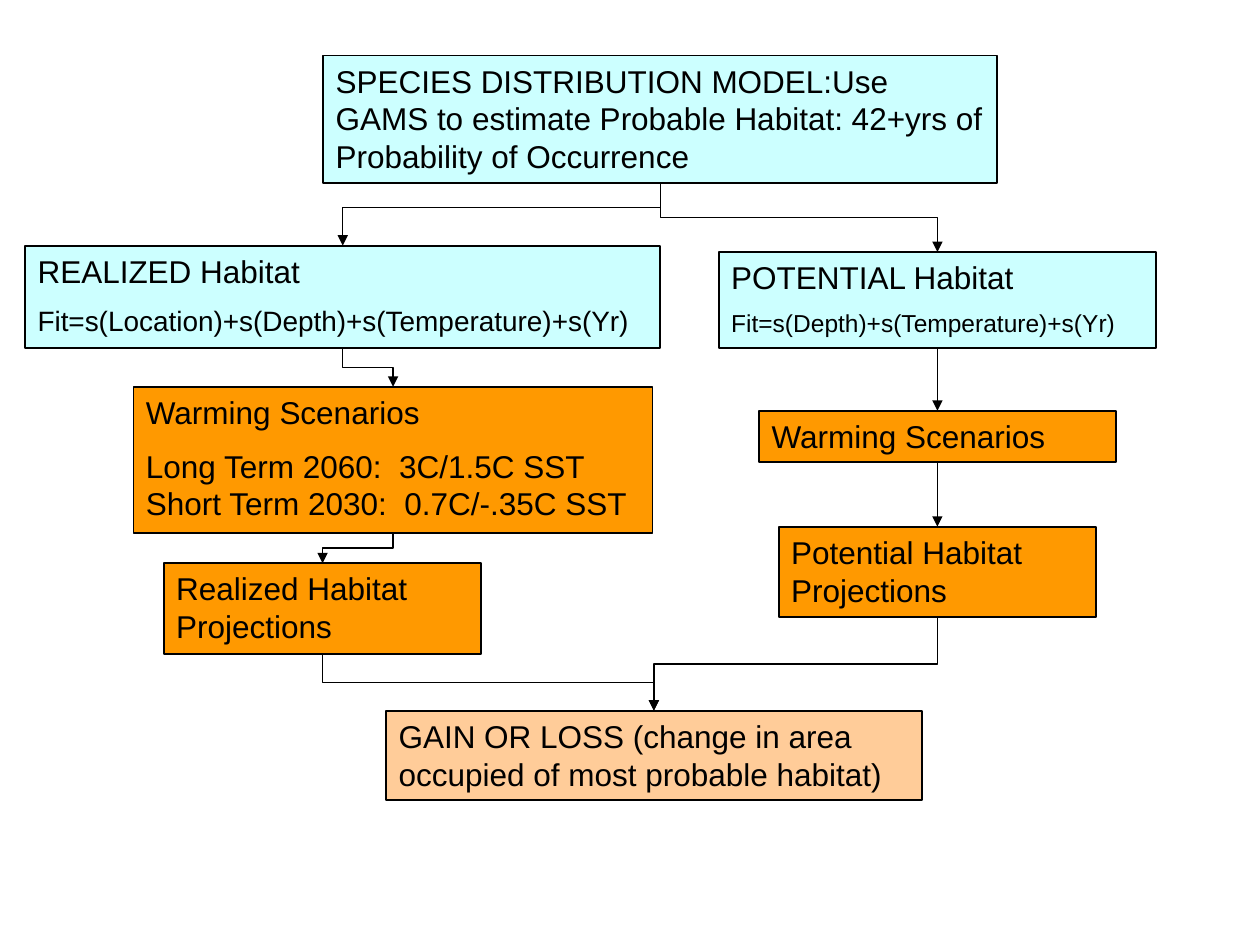
import pptx
import pptx.util
import pptx.dml.color
import pptx.enum.shapes
import pptx.enum.text
import pptx.oxml
import pptx.oxml.ns
from dataclasses import dataclass

COLUMNS, ROWS = 100, 75
WIDTH, HEIGHT = pptx.util.Inches(10), pptx.util.Inches(7.5)
BOTTOM, TOP = 2, 0
CONNECTOR = pptx.enum.shapes.MSO_CONNECTOR


@dataclass(frozen=True)
class Theme:
    font: str = "Arial"
    ink: str = "000000"
    model: str = "CCFFFF"
    scenario: str = "FF9900"
    outcome: str = "FFCC99"
    heading: int = 18
    formula: int = 16
    small_formula: int = 14
    outline: float = 1
    arrow: float = 0.75


THEME = Theme()


def across(columns):
    return round(WIDTH * columns / COLUMNS)


def down(rows):
    return round(HEIGHT * rows / ROWS)


def rgb(value):
    return pptx.dml.color.RGBColor.from_string(value)


def add_box(page, center, top, width, height, fill, *lines):
    box = page.shapes.add_shape(
        pptx.enum.shapes.MSO_SHAPE.RECTANGLE,
        across(center - width / 2), down(top), across(width), down(height))
    box.shadow.inherit = False
    box.fill.solid()
    box.fill.fore_color.rgb = rgb(fill)
    box.line.color.rgb = rgb(THEME.ink)
    box.line.width = pptx.util.Pt(THEME.outline)
    frame = box.text_frame
    frame.word_wrap = True
    frame.auto_size = pptx.enum.text.MSO_AUTO_SIZE.SHAPE_TO_FIT_TEXT
    frame.vertical_anchor = pptx.enum.text.MSO_ANCHOR.TOP
    for index, (text, size) in enumerate(lines):
        para = frame.add_paragraph() if index else frame.paragraphs[0]
        para.alignment = pptx.enum.text.PP_ALIGN.LEFT
        para.space_before = pptx.util.Pt(size / 2 if index else 0)
        span = para.add_run()
        span.text = text
        span.font.name = THEME.font
        span.font.size = pptx.util.Pt(size)
        span.font.color.rgb = rgb(THEME.ink)
    return box


def add_arrow(page, kind, left, top, right, bottom):
    arrow = page.shapes.add_connector(kind, left, top, right, bottom)
    arrow.line.color.rgb = rgb(THEME.ink)
    arrow.line.width = pptx.util.Pt(THEME.arrow)
    outline = arrow.line._get_or_add_ln()
    head = pptx.oxml.parse_xml(
        f'<a:tailEnd {pptx.oxml.ns.nsdecls("a")} type="triangle"/>')
    outline.append(head)
    effects = pptx.oxml.parse_xml(f'<a:effectLst {pptx.oxml.ns.nsdecls("a")}/>')
    arrow.element.spPr.append(effects)
    return arrow


def center_of(box):
    return box.left + box.width // 2


def add_straight(page, upper, lower):
    arrow = add_arrow(page, CONNECTOR.STRAIGHT, center_of(upper),
                      upper.top + upper.height, center_of(lower), lower.top)
    arrow.begin_connect(upper, BOTTOM)
    arrow.end_connect(lower, TOP)


def add_step(page, upper, lower):
    start, end = center_of(upper), center_of(lower)
    begin = upper.top + upper.height
    drop, shift = lower.top - begin, abs(end - start)
    left = (start + end - drop) // 2
    top = (begin + lower.top - shift) // 2
    arrow = add_arrow(page, CONNECTOR.ELBOW, left, top, left + drop, top + shift)
    if end > start:
        arrow.rotation_frame = None
        turn_arrow(arrow, 270, "flipH")
    else:
        turn_arrow(arrow, 90)


def turn_arrow(arrow, degrees, flip=None):
    frame = arrow.element.spPr.find(pptx.oxml.ns.qn("a:xfrm"))
    frame.set("rot", str(degrees * 60000))
    if flip:
        frame.set(flip, "1")


def add_branch(page, upper, lower, row):
    arrow = add_arrow(page, CONNECTOR.ELBOW, center_of(lower), down(row),
                      center_of(upper), lower.top)
    turn_arrow(arrow, 180, "flipV")
    geometry = arrow.element.spPr.find(pptx.oxml.ns.qn("a:prstGeom"))
    geometry.set("prst", "bentConnector2")


def main():
    deck = pptx.Presentation()
    deck.slide_width, deck.slide_height = WIDTH, HEIGHT
    page = deck.slides.add_slide(deck.slide_layouts[6])
    size = THEME.heading
    right_center = 74.4

    model = add_box(
        page, 52.4, 4.4, 53.5, 10.1, THEME.model,
        ("SPECIES DISTRIBUTION MODEL:Use GAMS to estimate Probable Habitat: "
         "42+yrs of Probability of Occurrence", size))
    realized_warming = add_box(
        page, 31.2, 30.7, 41.2, 11.6, THEME.scenario,
        ("Warming Scenarios", size),
        ("Long Term 2060:  3C/1.5C SST Short Term 2030:  0.7C/-.35C SST", size))
    realized = add_box(
        page, 27.2, 19.5, 50.4, 8.1, THEME.model,
        ("REALIZED Habitat", size),
        ("Fit=s(Location)+s(Depth)+s(Temperature)+s(Yr)", THEME.formula))
    potential = add_box(
        page, right_center, 20, 34.7, 7.6, THEME.model,
        ("POTENTIAL Habitat", size),
        ("Fit=s(Depth)+s(Temperature)+s(Yr)", THEME.small_formula))
    outcome = add_box(
        page, 51.9, 56.4, 42.5, 7.1, THEME.outcome,
        ("GAIN OR LOSS (change in area occupied of most probable habitat)", size))
    realized_projection = add_box(
        page, 25.6, 44.7, 25.2, 7.2, THEME.scenario,
        ("Realized Habitat Projections", size))
    potential_warming = add_box(
        page, right_center, 32.6, 28.3, 4.1, THEME.scenario,
        ("Warming Scenarios", size))
    potential_projection = add_box(
        page, right_center, 41.8, 25.2, 7.2, THEME.scenario,
        ("Potential Habitat Projections", size))

    add_branch(page, model, realized, 16.5)
    for upper, lower in (
            (model, potential),
            (realized, realized_warming),
            (realized_warming, realized_projection),
            (realized_projection, outcome),
            (potential_projection, outcome)):
        add_step(page, upper, lower)
    for upper, lower in ((potential, potential_warming),
                         (potential_warming, potential_projection)):
        add_straight(page, upper, lower)
    deck.save("out.pptx")


if __name__ == "__main__":
    main()
